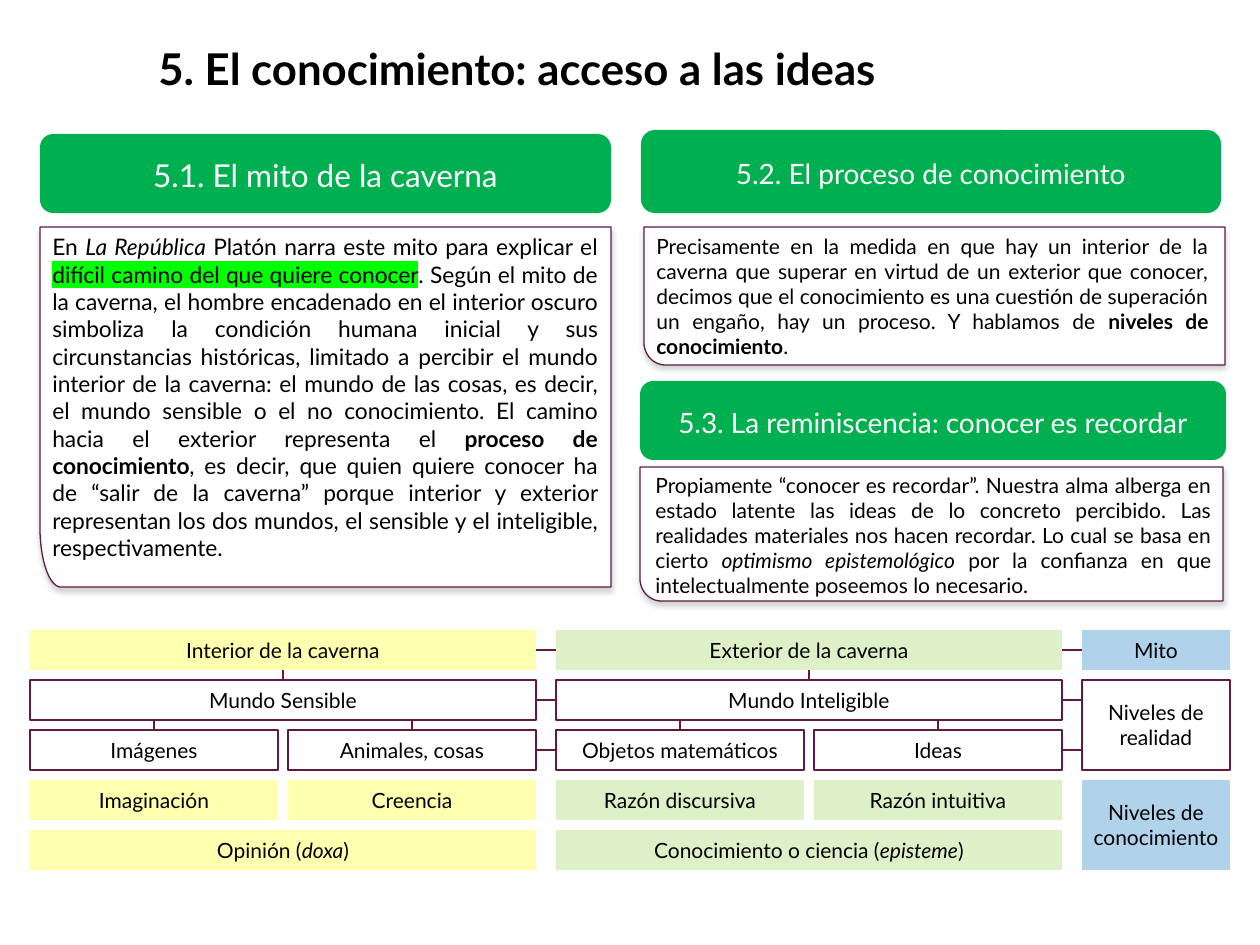
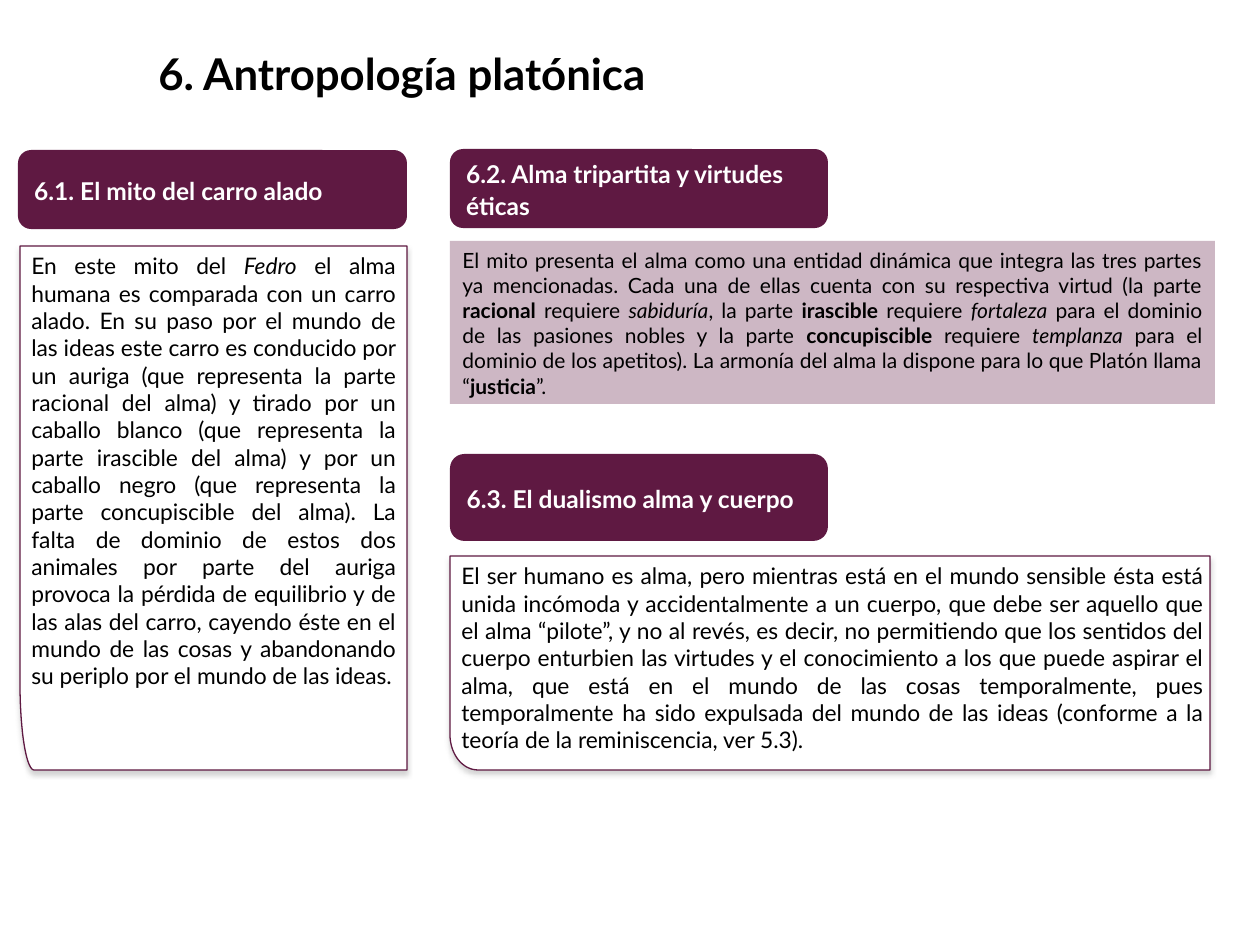
from dataclasses import dataclass
from math import cos, pi, sin
from typing import NamedTuple

from lxml import etree
from pptx import Presentation
from pptx.dml.color import RGBColor
from pptx.enum.shapes import MSO_CONNECTOR as CONN, MSO_SHAPE as SHAPE
from pptx.enum.text import MSO_ANCHOR as ANCHOR, PP_ALIGN as ALIGN
from pptx.oxml.ns import qn
from pptx.util import Emu, Inches, Pt

PX = 914400 / 126
FONT = "Lato"
COLORS = {
    "white": "FFFFFF", "black": "000000", "plum": "5F1942", "green": "00B050",
    "yellow": "FFFF00", "lime": "92D050", "blue": "0070C0",
    "marker": "00FF00", "shadow": "808080",
}
TINT = 31  # opacity of the tinted fills, in percent
TOP, LEFT, BOTTOM, RIGHT = range(4)


class Box(NamedTuple):
    x: int
    y: int
    w: int
    h: int

    def emu(self) -> list[Emu]:
        return [px(v) for v in self]


class Span(NamedTuple):
    text: str
    bold: bool = False
    italic: bool = False
    marked: bool = False


@dataclass
class Header:
    box: Box
    text: str
    size: int


@dataclass
class Panel:
    frame: Box
    text_box: Box
    size: int
    spans: list[Span | str]


@dataclass
class Cell:
    name: str
    column: int
    row: int
    content: list
    tint: str | None = None
    half: int | None = None  # 0 or 1 for half a column, None for all of it
    rows: int = 1


def px(value: float) -> Emu:
    return Emu(round(value * PX))


def rgb(name: str) -> RGBColor:
    return RGBColor.from_string(COLORS[name])


def add_color(parent, name: str, opacity: int | None = None) -> None:
    clr = etree.SubElement(parent, qn("a:srgbClr"), val=COLORS[name])
    if opacity:
        etree.SubElement(clr, qn("a:alpha"), val=str(opacity * 1000))


def write(sp, *paragraphs, size: int, color: str = "black", bold: bool = False,
          align=ALIGN.LEFT, anchor=ANCHOR.TOP, spacing: float = 1.0,
          wrap: bool = True) -> None:
    """Fill a shape with paragraphs, each a string or a list of spans."""
    tf = sp.text_frame
    tf.word_wrap, tf.vertical_anchor = wrap, anchor
    tf.margin_left = tf.margin_right = Inches(0.1)
    tf.margin_top = tf.margin_bottom = Inches(0.05)
    for i, content in enumerate(paragraphs):
        p = tf.add_paragraph() if i else tf.paragraphs[0]
        p.alignment, p.line_spacing = align, spacing
        for part in [content] if isinstance(content, str) else content:
            span = Span(part) if isinstance(part, str) else part
            r = p.add_run()
            r.text = span.text
            r.font.size, r.font.name = Pt(size), FONT
            r.font.bold, r.font.italic = bold or span.bold, span.italic
            r.font.color.rgb = rgb(color)
            if span.marked:
                mark = etree.Element(qn("a:highlight"))
                add_color(mark, "marker")
                r.font._element.find(qn("a:latin")).addprevious(mark)


def paint(sp, fill: str, opacity: int | None = None,
          line: str | None = None, width: float = 0.75) -> None:
    sp.shadow.inherit = False
    sp.fill.solid()
    sp.fill.fore_color.rgb = rgb(fill)
    if opacity:
        clr = sp._element.spPr.find(qn("a:solidFill")).find(qn("a:srgbClr"))
        etree.SubElement(clr, qn("a:alpha"), val=str(opacity * 1000))
    if line:
        sp.line.color.rgb = rgb(line)
        sp.line.width = Pt(width)
    else:
        sp.line.fill.background()


def add_title(slide, text: str, top: int) -> None:
    sp = slide.shapes.add_textbox(*Box(146, top, 1000, 74).emu())
    write(sp, text, size=25, bold=True, spacing=1.3)


def add_header(slide, header: Header, fill: str, **fmt) -> None:
    sp = slide.shapes.add_shape(SHAPE.ROUNDED_RECTANGLE, *header.box.emu())
    paint(sp, fill)
    write(sp, header.text, size=header.size, color="white",
          anchor=ANCHOR.MIDDLE, spacing=1.1, **fmt)


def add_frame(slide, box: Box) -> None:
    """White box with a rounded lower left corner and a soft shadow."""
    x, y, w, h = box
    rx, ry, steps = w * 0.0365, h / 6, 24
    angles = [pi / 2 * i / steps for i in range(steps + 1)]
    corner = [(x + rx * (1 - sin(a)), y + h - ry * (1 - cos(a))) for a in angles]
    points = [(px(a), px(b)) for a, b in [*corner, (x, y), (x + w, y)]]
    builder = slide.shapes.build_freeform(px(x + w), px(y + h))
    builder.add_line_segments(points, close=True)
    sp = builder.convert_to_shape()
    paint(sp, "white", line="plum")
    shadow = etree.SubElement(
        sp._element.spPr.find(qn("a:effectLst")), qn("a:outerShdw"),
        blurRad=str(Pt(3.1)), dist=str(Pt(1.8)), dir="5400000", rotWithShape="0")
    add_color(shadow, "shadow", 35)


def add_panel(slide, panel: Panel) -> None:
    add_frame(slide, panel.frame)
    sp = slide.shapes.add_textbox(*panel.text_box.emu())
    write(sp, panel.spans, size=panel.size, align=ALIGN.JUSTIFY)


# Grid of the cave scheme
COLUMNS = [(30, 506), (556, 506), (1082, 148)]
GRID_TOP, CELL_H, GAP = 630, 40, 10


def cell_box(cell: Cell) -> Box:
    x, w = COLUMNS[cell.column]
    step = CELL_H + GAP
    if cell.half is not None:
        w = (w - GAP) // 2
        x += cell.half * (w + GAP)
    return Box(x, GRID_TOP + cell.row * step, w, cell.rows * step - GAP)


def add_cell(slide, cell: Cell):
    sp = slide.shapes.add_shape(SHAPE.RECTANGLE, *cell_box(cell).emu())
    if cell.tint:
        paint(sp, cell.tint, TINT)
    else:
        paint(sp, "white", line="plum", width=0.85)
    write(sp, *cell.content, size=12, align=ALIGN.CENTER,
          anchor=ANCHOR.MIDDLE, wrap=False)
    return sp


def link(slide, start: tuple[int, int], end: tuple[int, int],
         begin_at=None, end_at=None) -> None:
    """Line between two EMU points; begin_at and end_at are (shape, side)."""
    line = slide.shapes.add_connector(CONN.STRAIGHT, *start, *end)
    if begin_at:
        line.begin_connect(*begin_at)
    if end_at:
        line.end_connect(*end_at)
    line.line.color.rgb = rgb("plum")
    line.line.width = Pt(0.75)
    etree.SubElement(line._element.spPr, qn("a:effectLst"))


def link_right(slide, a, b) -> None:
    y = a.top + a.height // 2
    level = a.height == b.height
    link(slide, (a.left + a.width, y), (b.left, y), (a, RIGHT),
         (b, LEFT) if level else None)


def link_down(slide, a, b) -> None:
    x = b.left + b.width // 2
    aligned = a.width == b.width
    link(slide, (x, a.top + a.height), (x, b.top),
         (a, BOTTOM) if aligned else None, (b, TOP))


CELLS = [
    Cell("interior", 0, 0, ["Interior de la caverna"], "yellow"),
    Cell("exterior", 1, 0, ["Exterior de la caverna"], "lime"),
    Cell("mito", 2, 0, ["Mito"], "blue"),
    Cell("sensible", 0, 1, ["Mundo Sensible"]),
    Cell("inteligible", 1, 1, ["Mundo Inteligible"]),
    Cell("realidad", 2, 1, ["Niveles de", "realidad"], rows=2),
    Cell("imagenes", 0, 2, ["Imágenes"], half=0),
    Cell("animales", 0, 2, ["Animales, cosas"], half=1),
    Cell("objetos", 1, 2, ["Objetos matemáticos"], half=0),
    Cell("ideas", 1, 2, ["Ideas"], half=1),
    Cell("imaginacion", 0, 3, ["Imaginación"], "yellow", half=0),
    Cell("creencia", 0, 3, ["Creencia"], "yellow", half=1),
    Cell("discursiva", 1, 3, ["Razón discursiva"], "lime", half=0),
    Cell("intuitiva", 1, 3, ["Razón intuitiva"], "lime", half=1),
    Cell("conocimiento", 2, 3, ["Niveles de", "conocimiento"], "blue", rows=2),
    Cell("doxa", 0, 4, [["Opinión (", Span("doxa", italic=True), ")"]], "yellow"),
    Cell("episteme", 1, 4,
         [["Conocimiento o ciencia (", Span("episteme", italic=True), ")"]], "lime"),
]
ACROSS = [("interior", "exterior"), ("exterior", "mito"),
          ("sensible", "inteligible"), ("inteligible", "realidad"),
          ("animales", "objetos"), ("ideas", "realidad")]
DOWN = [("interior", "sensible"), ("exterior", "inteligible"),
        ("sensible", "imagenes"), ("sensible", "animales"),
        ("inteligible", "objetos"), ("inteligible", "ideas")]

KNOWLEDGE_HEADERS = [
    Header(Box(40, 134, 571, 79), "5.1. El mito de la caverna", 18),
    Header(Box(641, 130, 580, 83), "5.2. El proceso de conocimiento", 16),
    Header(Box(640, 381, 586, 79), "5.3. La reminiscencia: conocer es recordar", 16),
]
KNOWLEDGE_PANELS = [
    Panel(Box(40, 227, 571, 360), Box(40, 227, 570, 118), 13, [
        "En ", Span("La República", italic=True),
        " Platón narra este mito para explicar el ",
        Span("difícil camino del que quiere conocer", marked=True),
        ". Según el mito de la caverna, el hombre encadenado en el interior oscuro simboliza la condición humana inicial y sus circunstancias históricas, limitado a percibir el mundo interior de la caverna: el mundo de las cosas, es decir, el mundo sensible o el no conocimiento. El camino hacia el exterior representa el ",
        Span("proceso de conocimiento", bold=True),
        ", es decir, que quien quiere conocer ha de “salir de la caverna” porque interior y exterior representan los dos mundos, el sensible y el inteligible, respectivamente."]),
    Panel(Box(644, 227, 581, 138), Box(644, 227, 577, 102), 12, [
        "Precisamente en la medida en que hay un interior de la caverna que superar en virtud de un exterior que conocer, decimos que el conocimiento es una cuestión de superación un engaño, hay un proceso. Y hablamos de ",
        Span("niveles de conocimiento", bold=True), "."]),
    Panel(Box(640, 467, 583, 134), Box(643, 466, 581, 145), 12, [
        "Propiamente “conocer es recordar”. Nuestra alma alberga en estado latente las ideas de lo concreto percibido. Las realidades materiales nos hacen recordar. Lo cual se basa en cierto ",
        Span("optimismo epistemológico", italic=True),
        " por la confianza en que intelectualmente poseemos lo necesario."]),
]

SOUL_HEADERS = [
    Header(Box(18, 150, 389, 79), "6.1. El mito del carro alado", 14),
    Header(Box(450, 149, 378, 79), "6.2. Alma tripartita y virtudes éticas", 14),
    Header(Box(450, 454, 378, 87), "6.3. El dualismo alma y cuerpo", 14),
]
SOUL_PANELS = [
    Panel(Box(20, 246, 387, 524), Box(19, 246, 389, 525), 13, [
        "En este mito del ", Span("Fedro", italic=True),
        " el alma humana es comparada con un carro alado. En su paso por el mundo de las ideas este carro es conducido por un auriga (que representa la parte racional del alma) y tirado por un caballo blanco (que representa la parte irascible del alma) y por un caballo negro (que representa la parte concupiscible del alma). La falta de dominio de estos dos animales por parte del auriga provoca la pérdida de equilibrio y de las alas del carro, cayendo éste en el mundo de las cosas y abandonando su periplo por el mundo de las ideas."]),
    Panel(Box(450, 556, 760, 214), Box(449, 556, 766, 214), 13, [
        "El ser humano es alma, pero mientras está en el mundo sensible ésta está unida incómoda y accidentalmente a un cuerpo, que debe ser aquello que el alma “pilote”, y no al revés, es decir, no permitiendo que los sentidos del cuerpo enturbien las virtudes y el conocimiento a los que puede aspirar el alma, que está en el mundo de las cosas temporalmente, pues temporalmente ha sido expulsada del mundo de las ideas (conforme a la teoría de la reminiscencia, ver 5.3)."]),
]
VIRTUES = [
    "El mito presenta el alma como una entidad dinámica que integra las tres partes ya mencionadas. Cada una de ellas cuenta con su respectiva virtud (la parte ",
    Span("racional", bold=True), " requiere ", Span("sabiduría", italic=True),
    ", la parte ", Span("irascible", bold=True), " requiere ",
    Span("fortaleza", italic=True),
    " para el dominio de las pasiones nobles y la parte ",
    Span("concupiscible", bold=True), " requiere ", Span("templanza", italic=True),
    " para el dominio de los apetitos). La armonía del alma la dispone para lo que Platón llama “",
    Span("justicia", bold=True), "”.",
]


def add_section(prs, title: str, top: int, headers: list[Header],
                panels: list[Panel], fill: str, **fmt):
    slide = prs.slides.add_slide(prs.slide_layouts[6])
    add_title(slide, title, top)
    for panel in panels:
        add_panel(slide, panel)
    for header in headers:
        add_header(slide, header, fill, **fmt)
    return slide


def main() -> None:
    prs = Presentation()
    prs.slide_width, prs.slide_height = Inches(10), Inches(7.5)

    # Knowledge, with the cave scheme below
    slide = add_section(prs, "5. El conocimiento: acceso a las ideas", 20,
                        KNOWLEDGE_HEADERS, KNOWLEDGE_PANELS, "green", align=ALIGN.CENTER)
    cells = {cell.name: add_cell(slide, cell) for cell in CELLS}
    for a, b in ACROSS:
        link_right(slide, cells[a], cells[b])
    for a, b in DOWN:
        link_down(slide, cells[a], cells[b])

    # The soul, with the tinted box on virtues
    slide = add_section(prs, "6. Antropología platónica", 25,
                        SOUL_HEADERS, SOUL_PANELS, "plum", bold=True)
    sp = slide.shapes.add_shape(SHAPE.RECTANGLE, *Box(450, 241, 765, 163).emu())
    paint(sp, "plum", TINT)
    write(sp, VIRTUES, size=12, align=ALIGN.JUSTIFY)

    prs.save("out.pptx")


if __name__ == "__main__":
    main()
